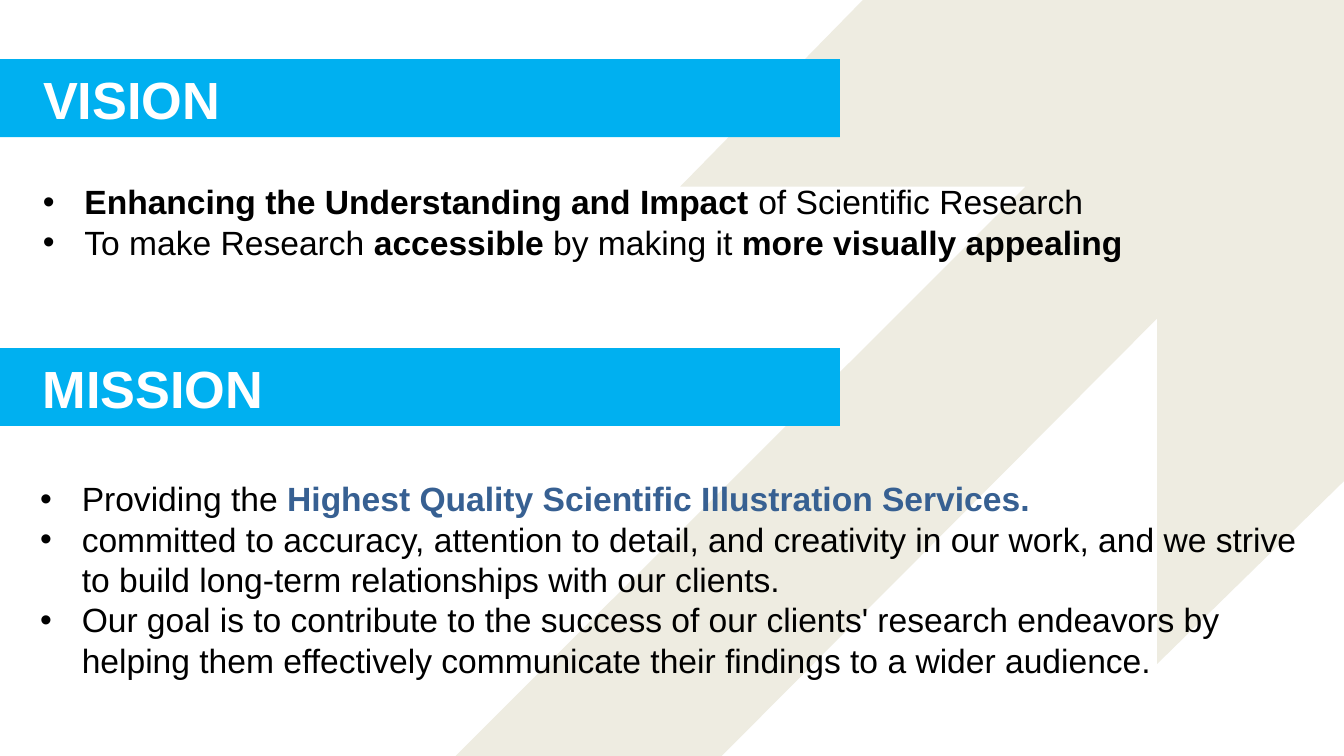
from pptx import Presentation, util as u
from pptx.dml.color import RGBColor
from pptx.enum import shapes, text
from pptx.oxml import parse_xml
from pptx.oxml.ns import nsdecls

COLORS = {"band": "00B0F0", "backdrop": "EEECE1", "heading": "FFFFFF",
          "body": "000000", "accent": "376092"}
HEADING = {"name": "Arial", "size": u.Pt(28), "bold": True}
BODY = {"name": "Arial", "size": u.Pt(18), "bold": False}
STRONG = {**BODY, "bold": True}
FRAME = {"word_wrap": True, "auto_size": text.MSO_AUTO_SIZE.NONE,
         "vertical_anchor": text.MSO_ANCHOR.TOP,
         "margin_left": u.Inches(0.1), "margin_right": u.Inches(0.1),
         "margin_top": u.Inches(0.05), "margin_bottom": u.Inches(0.05)}

SLIDE_W = 10
SLIDE_H = SLIDE_W * 9 / 16
BAND_W, BAND_H = 6.25, 0.58
INDENT = u.Inches(0.31)

ARROW = [(6.42, 0), (5.06, 1.39), (7.63, 1.39), (3.39, SLIDE_H),
         (5.37, SLIDE_H), (8.61, 2.37), (8.61, 4.94), (SLIDE_W, 3.58),
         (SLIDE_W, 0)]

VISION = [
    [("Enhancing the Understanding and Impact", STRONG, "body"),
     (" of Scientific Research", BODY, "body")],
    [("To make Research ", BODY, "body"), ("accessible", STRONG, "body"),
     (" by making it ", BODY, "body"),
     ("more visually appealing", STRONG, "body")],
]
MISSION = [
    [("Providing the ", BODY, "body"),
     ("Highest Quality Scientific Illustration Services.", STRONG, "accent")],
    [("committed to accuracy, attention to detail, and creativity in our work, "
      "and we strive to build long-term relationships with our clients.",
      BODY, "body")],
    [("Our goal is to contribute to the success of our clients' research "
      "endeavors by helping them effectively communicate their findings "
      "to a wider audience.", BODY, "body")],
]


def apply(target, values):
    for key, value in values.items():
        setattr(target, key, value)


def paint(shape, color):
    shape.shadow.inherit = False
    shape.fill.solid()
    shape.fill.fore_color.rgb = RGBColor.from_string(COLORS[color])
    shape.line.fill.background()


def write(paragraph, words, style, color):
    run = paragraph.add_run()
    run.text = words
    apply(run.font, style)
    run.font.color.rgb = RGBColor.from_string(COLORS[color])


def add_backdrop(slide, left, top):
    points = [(u.Inches(left + x), u.Inches(top + y)) for x, y in ARROW]
    outline = slide.shapes.build_freeform(*points[0], scale=1.0)
    outline.add_line_segments(points[1:], close=True)
    paint(outline.convert_to_shape(), "backdrop")


def add_heading(slide, words, top, label_width, title=None):
    band = slide.shapes.add_shape(
        shapes.MSO_SHAPE.RECTANGLE, 0, u.Inches(top),
        u.Inches(BAND_W), u.Inches(BAND_H))
    paint(band, "band")
    label = title or slide.shapes.add_textbox(0, 0, 0, 0)
    band.element.addnext(label.element)
    apply(label, {"left": u.Inches(0.22), "top": u.Inches(top + 0.01),
                  "width": u.Inches(label_width), "height": u.Inches(0.57)})
    apply(label.text_frame, FRAME)
    paragraph = label.text_frame.paragraphs[0]
    paragraph.alignment = text.PP_ALIGN.LEFT
    write(paragraph, words, HEADING, "heading")


def add_bullets(slide, items, left, top, width, height):
    box = slide.shapes.add_textbox(*map(u.Inches, (left, top, width, height)))
    frame = box.text_frame
    apply(frame, FRAME)
    for index, runs in enumerate(items):
        paragraph = frame.add_paragraph() if index else frame.paragraphs[0]
        properties = paragraph._p.get_or_add_pPr()
        properties.set("marL", str(INDENT))
        properties.set("indent", str(-INDENT))
        for bullet in (f'<a:buClr {nsdecls("a")}><a:srgbClr val="{COLORS["body"]}"/></a:buClr>',
                       f'<a:buFont {nsdecls("a")} typeface="Arial"/>',
                       f'<a:buChar {nsdecls("a")} char="•"/>'):
            properties.append(parse_xml(bullet))
        for words, style, color in runs:
            write(paragraph, words, style, color)


def main():
    deck = Presentation()
    apply(deck, {"slide_width": u.Inches(SLIDE_W),
                 "slide_height": u.Inches(SLIDE_H)})
    slide = deck.slides.add_slide(deck.slide_layouts.get_by_name("Title Only"))
    add_backdrop(slide, 0, 0)
    add_heading(slide, "VISION", 0.44, 1.58, slide.shapes.title)
    add_heading(slide, "MISSION", 2.59, 2.02)
    add_bullets(slide, VISION, 0.22, 1.3, 8.77, 0.71)
    add_bullets(slide, MISSION, 0.2, 3.51, 9.59, 1.62)
    deck.save("out.pptx")


if __name__ == "__main__":
    main()
